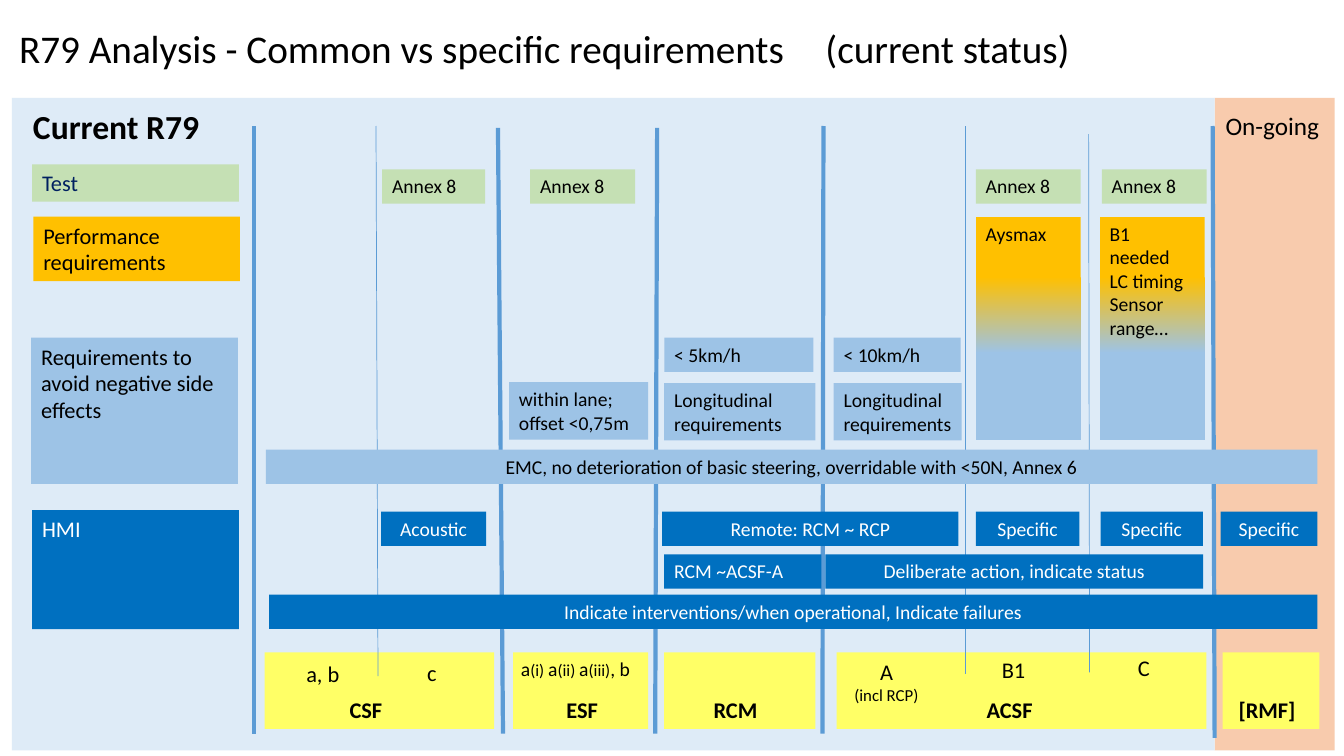
from copy import deepcopy
from dataclasses import dataclass
from typing import Any, NamedTuple

from lxml.etree import SubElement
from pptx import Presentation
from pptx.dml.color import RGBColor as Rgb
from pptx.enum.shapes import MSO_CONNECTOR as Connector, MSO_SHAPE as Preset
from pptx.enum.text import MSO_ANCHOR as Anchor, PP_ALIGN as Align
from pptx.oxml.ns import qn
from pptx.util import Pt


@dataclass(frozen=True)
class Theme:
    font: str = "Calibri"
    black: str = "000000"
    white: str = "FFFFFF"
    navy: str = "002060"
    current: str = "DEEBF7"
    ongoing: str = "F8CBAD"
    test: str = "C5E0B4"
    performance: str = "FFC000"
    side_effects: str = "9DC3E6"
    hmi: str = "0070C0"
    family: str = "FFFF66"
    divider: str = "5B9BD5"
    title: float = 28
    heading: float = 24
    subheading: float = 18
    label: float = 16
    body: float = 14
    small: float = 12


THEME = Theme()


@dataclass(frozen=True)
class Style:
    fill: str | None = None
    ink: str = THEME.black
    size: float = THEME.body
    align: Align = Align.LEFT
    bold: bool = False
    wrap: bool = True
    anchor: Anchor = Anchor.TOP
    spacing: float = 1.0
    fade_to: str | None = None


class Box(NamedTuple):
    """Text splits into paragraphs at line ends; every second part between bars is small."""
    left: float
    top: float
    width: float
    height: float
    text: str = ""


class Divider(NamedTuple):
    x1: float
    y1: float
    x2: float
    y2: float
    weight: float


BAR = 24.5        # one-line box
DOUBLE = 41       # two-line box
TEST_TOP, LIMIT_TOP, LONGITUDINAL_TOP = 121, 241.2, 273.6
SPECIFIC_TOP, ACTION_TOP, INDICATE_TOP = 365.5, 396, 424.8
FAMILY_TOP, FAMILY_HEIGHT, FAMILY_NAME_TOP = 466, 54.7, 494
RCM, ACSF_A, ACSF_B, ACSF_C, RMF = 474.5, 595.5, 697, 785.5, 872
THICK, THIN = 3, 0.5

BACKDROP = [
    (Style(THEME.ongoing), [Box(867.6, 70, 85.7, 466)]),
    (Style(THEME.current), [Box(8.6, 70, 859, 466)]),
    (Style(THEME.family), [
        Box(left, FAMILY_TOP, width, FAMILY_HEIGHT)
        for left, width in ((189, 164), (366.5, 96.5), (RCM, 108), (597.6, 264.2), (873.4, 69))
    ]),
]

DIVIDERS = [
    Divider(181.4, 90, 181.4, 524, THICK),
    Divider(268.6, 90, 270, 483, THIN),
    Divider(355.7, 91.4, 359.3, 524, THICK),
    Divider(469.4, 91.4, 468, 524, THICK),
    Divider(588.2, 90, 587.5, 524, THICK),
    Divider(689.8, 90, 689.8, 481.7, THIN),
    Divider(777.6, 95.8, 778.3, 480.2, THIN),
    Divider(866.2, 90, 867.6, 527, THICK),
]

FADE = Style(THEME.performance, fade_to=THEME.side_effects)
EFFECT = Style(THEME.side_effects)
HMI_BAR = Style(THEME.hmi, THEME.white, align=Align.CENTER)
FAMILY_NAME = Style(size=THEME.label, bold=True, wrap=False)
VARIANT = Style(size=THEME.label, wrap=False)

CONTENT = [
    (Style(size=THEME.title, anchor=Anchor.MIDDLE, spacing=0.9), [
        Box(6.5, 6.5, 888, 59, "R79 Analysis - Common vs specific requirements\t(current status)")]),
    (Style(size=THEME.heading, bold=True, wrap=False), [Box(16.5, 72, 134.6, 36, "Current R79")]),
    (Style(size=THEME.subheading, wrap=False), [Box(868.3, 75, 82, 29, "On-going")]),
    (Style(THEME.test, THEME.navy, THEME.label), [Box(23, 117.4, 147.6, 26.6, "Test")]),
    (Style(THEME.performance, size=THEME.label), [
        Box(23.8, 154.8, 147.6, 46, "Performance requirements")]),
    (Style(THEME.side_effects, size=THEME.label), [
        Box(22.3, LIMIT_TOP, 147.6, 104.4, "Requirements to avoid negative side effects")]),
    (Style(THEME.hmi, THEME.white, THEME.label), [Box(23, 364.3, 147.6, 85, "HMI")]),
    (Style(THEME.test), [
        Box(left, TEST_TOP, width, BAR, "Annex 8")
        for left, width in ((273, 73.5), (378.7, 75), (ACSF_B, 75), (787, 75))
    ]),
    (FADE, [
        Box(ACSF_B, 154.8, 75, 159.8, "Aysmax"),
        Box(ACSF_C, 154.8, 75, 159.8, "B1 needed\nLC timing Sensor range…"),
    ]),
    (EFFECT, [
        Box(RCM, LIMIT_TOP, 106.6, BAR, "< 5km/h"),
        Box(ACSF_A, LIMIT_TOP, 90.7, BAR, "< 10km/h"),
        Box(363.6, 273, 99.4, DOUBLE, "within lane;\noffset <0,75m"),
        Box(RCM, LONGITUDINAL_TOP, 108, DOUBLE, "Longitudinal requirements"),
        Box(ACSF_A, LONGITUDINAL_TOP, 91.5, DOUBLE, "Longitudinal requirements"),
    ]),
    (Style(THEME.side_effects, align=Align.CENTER), [
        Box(190, 321.1, 751, BAR,
            "EMC, no deterioration of basic steering, overridable with <50N, Annex 6")]),
    (HMI_BAR, [
        Box(272.2, SPECIFIC_TOP, 75, BAR, "Acoustic"),
        Box(473, SPECIFIC_TOP, 211.7, BAR, "Remote: RCM ~ RCP"),
        *(Box(left, SPECIFIC_TOP, width, BAR, "Specific")
          for left, width in ((ACSF_B, 74), (786.2, 73), (RMF, 69))),
        Box(589.5, ACTION_TOP, 270, BAR, "Deliberate action, indicate status"),
        Box(192.2, INDICATE_TOP, 748.8, BAR,
            "Indicate interventions/when operational, Indicate failures"),
    ]),
    (Style(THEME.hmi, THEME.white), [Box(RCM, ACTION_TOP, 112.3, BAR, "RCM ~ACSF-A")]),
    (FAMILY_NAME, [
        Box(left, FAMILY_NAME_TOP, width, 26.6, name)
        for left, width, name in ((242.6, 46.8, "CSF"), (397.5, 41.5, "ESF"), (502.6, 51, "RCM"),
                                  (697.7, 58.3, "ACSF"), (877.7, 60.5, "[RMF]"))
    ]),
    (VARIANT, [
        Box(211.7, 468, 41.8, 26.6, "a, b"),
        Box(298, 467.3, 22.3, 26.6, "c"),
        Box(708.5, 465, 34.6, 26.6, "B1"),
        Box(805.7, 463.7, 26, 26.6, "C"),
    ]),
    (Style(size=THEME.label, align=Align.CENTER, wrap=False), [
        Box(602.6, 466.6, 61.2, 41, "A\n|(incl RCP)")]),
    (Style(wrap=False), [Box(365, 466, 100.8, BAR, "a|(i) |a|(ii) |a|(iii)|, b")]),
]


def set_formats(target: Any, formats: dict[str, Any]) -> None:
    for name, value in formats.items():
        setattr(target, name, value)


def write_text(shape: Any, text: str, style: Style) -> None:
    frame = shape.text_frame
    set_formats(frame, {"word_wrap": style.wrap, "vertical_anchor": style.anchor})
    for number, line in enumerate(text.split("\n")):
        para = frame.add_paragraph() if number else frame.paragraphs[0]
        set_formats(para, {"alignment": style.align, "line_spacing": style.spacing})
        for index, part in enumerate(line.split("|")):
            if not part:
                continue
            span = para.add_run()
            span.text = part
            size = THEME.small if index % 2 else style.size
            set_formats(span.font, {"name": THEME.font, "size": Pt(size), "bold": style.bold})
            span.font.color.rgb = Rgb.from_string(style.ink)


def fade_fill(shape: Any, start: str, end: str) -> None:
    """Fill from top to bottom, holding each colour before and after the blend."""
    shape.fill.gradient()
    shape.fill.gradient_angle = 270
    stop_list = shape._element.spPr.find(".//" + qn("a:gsLst"))
    for stop in list(stop_list):
        stop_list.append(deepcopy(stop))
    stops = ((0, start), (0.27, start), (0.61, end), (1, end))
    for stop, (position, colour) in zip(shape.fill.gradient_stops, stops):
        stop.position = position
        stop.color.rgb = Rgb.from_string(colour)


def draw_box(page: Any, box: Box, style: Style) -> None:
    bounds = [Pt(length) for length in box[:4]]
    if style.fill is None:
        shape = page.shapes.add_textbox(*bounds)
    else:
        shape = page.shapes.add_shape(Preset.RECTANGLE, *bounds)
        shape.shadow.inherit = False
        shape.line.fill.background()
        if style.fade_to:
            fade_fill(shape, style.fill, style.fade_to)
        else:
            shape.fill.solid()
            shape.fill.fore_color.rgb = Rgb.from_string(style.fill)
    if box.text:
        write_text(shape, box.text, style)


def draw_divider(page: Any, divider: Divider) -> None:
    ends = [Pt(length) for length in divider[:4]]
    line = page.shapes.add_connector(Connector.STRAIGHT, *ends)
    line.line.color.rgb = Rgb.from_string(THEME.divider)
    line.line.width = Pt(divider.weight)
    SubElement(line._element.spPr, qn("a:effectLst"))


def draw_groups(page: Any, groups: list[tuple[Style, list[Box]]]) -> None:
    for style, boxes in groups:
        for box in boxes:
            draw_box(page, box, style)


def main() -> None:
    deck = Presentation()
    set_formats(deck, {"slide_width": Pt(960), "slide_height": Pt(540)})
    page = deck.slides.add_slide(deck.slide_layouts[6])
    draw_groups(page, BACKDROP)
    for divider in DIVIDERS:
        draw_divider(page, divider)
    draw_groups(page, CONTENT)
    deck.save("out.pptx")


if __name__ == "__main__":
    main()
